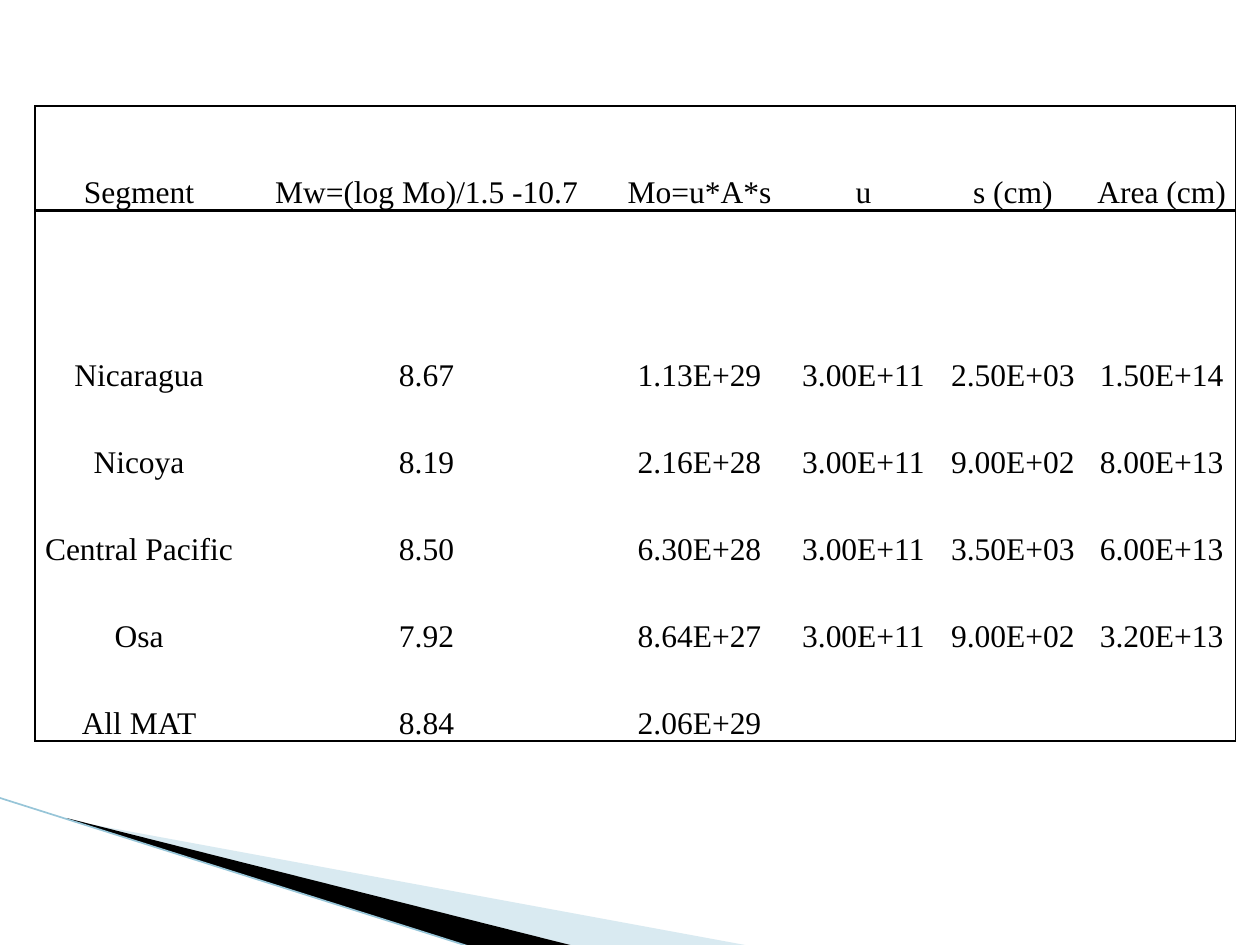
from dataclasses import dataclass

from lxml import etree
from pptx import Presentation
from pptx.dml.color import RGBColor
from pptx.enum import shapes, text
from pptx.oxml import ns
from pptx.util import Pt


@dataclass(frozen=True)
class Theme:
    ink: str = "000000"
    pale: str = "A0CBDC"
    edge: str = "97C5D8"
    font: str = "Times New Roman"
    size: float = 18
    thin: float = 1
    thick: float = 2.25


THEME = Theme()

HEADER = ["Segment", "Mw=(log Mo)/1.5 -10.7", "Mo=u*A*s", "u", "s (cm)", "Area (cm)"]
SEGMENTS = [
    ["Nicaragua", "8.67", "1.13E+29", "3.00E+11", "2.50E+03", "1.50E+14"],
    ["Nicoya", "8.19", "2.16E+28", "3.00E+11", "9.00E+02", "8.00E+13"],
    ["Central Pacific", "8.50", "6.30E+28", "3.00E+11", "3.50E+03", "6.00E+13"],
    ["Osa", "7.92", "8.64E+27", "3.00E+11", "9.00E+02", "3.20E+13"],
    ["All MAT", "8.84", "2.06E+29", "", "", ""],
]
ROWS = [HEADER, [""] * len(HEADER)] + SEGMENTS
COLUMN_SHARES = [1.65, 2.91, 1.42, 1.18, 1.19, 1.17]
ROW_SHARES = [0.83, 0.76] + [0.69] * len(SEGMENTS)


def add_xml(parent, tag, **attributes):
    return etree.SubElement(parent, ns.qn(tag), attributes)


def write(frame, content, *, size=THEME.size, color=THEME.ink,
          align=text.PP_ALIGN.CENTER, spacing=1.15):
    paragraph = frame.paragraphs[0]
    paragraph.alignment = align
    paragraph.line_spacing = spacing
    run = paragraph.add_run()
    run.text = content
    run.font.name = THEME.font
    run.font.size = Pt(size)
    run.font.color.rgb = RGBColor.from_string(color)


def set_borders(cell, widths):
    """Draw the sides left, right, top and bottom; a width of 0 hides a side."""
    properties = cell._tc.get_or_add_tcPr()
    for side, width in zip("LRTB", widths):
        border = add_xml(properties, f"a:ln{side}", w=str(Pt(width)))
        if width:
            fill = add_xml(border, "a:solidFill")
            add_xml(fill, "a:srgbClr", val=THEME.ink)
        else:
            add_xml(border, "a:noFill")


def border_widths(row, column):
    """Thin frame around the table, thick rule below the header."""
    left = THEME.thin if column == 0 else 0
    right = THEME.thin if column == len(HEADER) - 1 else 0
    top = {0: THEME.thin, 1: THEME.thick}.get(row, 0)
    bottom = {0: THEME.thick, len(ROWS) - 1: THEME.thin}.get(row, 0)
    return left, right, top, bottom


def add_segment_table(slide, left, top, width, height):
    table = slide.shapes.add_table(len(ROWS), len(HEADER), Pt(left), Pt(top),
                                   Pt(width), Pt(height)).table
    table.first_row = table.horz_banding = False
    for column, share in zip(table.columns, COLUMN_SHARES):
        column.width = Pt(width * share / sum(COLUMN_SHARES))
    for row, share in zip(table.rows, ROW_SHARES):
        row.height = Pt(height * share / sum(ROW_SHARES))
    for r, values in enumerate(ROWS):
        for c, value in enumerate(values):
            cell = table.cell(r, c)
            cell.vertical_anchor = text.MSO_ANCHOR.BOTTOM
            cell.margin_left = cell.margin_right = Pt(5)
            cell.margin_top = cell.margin_bottom = 0
            set_borders(cell, border_widths(r, c))
            cell.fill.background()
            if value:
                write(cell.text_frame, value)


def add_wedge(slide, left, top, points, color, opacity=100):
    start, *others = [(Pt(left + x), Pt(top + y)) for x, y in points]
    builder = slide.shapes.build_freeform(*start)
    builder.add_line_segments(others, close=True)
    wedge = builder.convert_to_shape()
    wedge.shadow.inherit = False
    wedge.line.fill.background()
    wedge.fill.solid()
    wedge.fill.fore_color.rgb = RGBColor.from_string(color)
    if opacity < 100:
        color_node = wedge._element.spPr.find(".//" + ns.qn("a:srgbClr"))
        add_xml(color_node, "a:alpha", val=str(opacity * 1000))


def add_corner_sweep(slide, left, top, width, height):
    """Pale and black wedges fanning out from a thin diagonal edge."""
    tip, fold, foot = width * 0.09, width * 0.765, width * 0.623
    add_wedge(slide, left, top,
              [(tip, 12.6), (width, height), (fold, height), (tip, 12)],
              THEME.pale, opacity=40)
    add_wedge(slide, left, top,
              [(tip, 11.6), (fold, height), (foot, height), (tip, 12.2)],
              THEME.ink)
    edge = slide.shapes.add_connector(shapes.MSO_CONNECTOR.STRAIGHT,
                                      Pt(left), Pt(top),
                                      Pt(left + foot), Pt(top + height))
    edge.line.color.rgb = RGBColor.from_string(THEME.edge)
    edge.line.width = Pt(0.95)
    add_xml(edge._element.spPr, "a:effectLst")


def main():
    deck = Presentation()
    deck.slide_width, deck.slide_height = Pt(720), Pt(540)
    slide = deck.slides.add_slide(deck.slide_layouts[6])
    add_corner_sweep(slide, left=0, top=456, width=428.5, height=84.5)
    add_segment_table(slide, left=20, top=60.5, width=686, height=363)
    deck.save("out.pptx")


if __name__ == "__main__":
    main()
